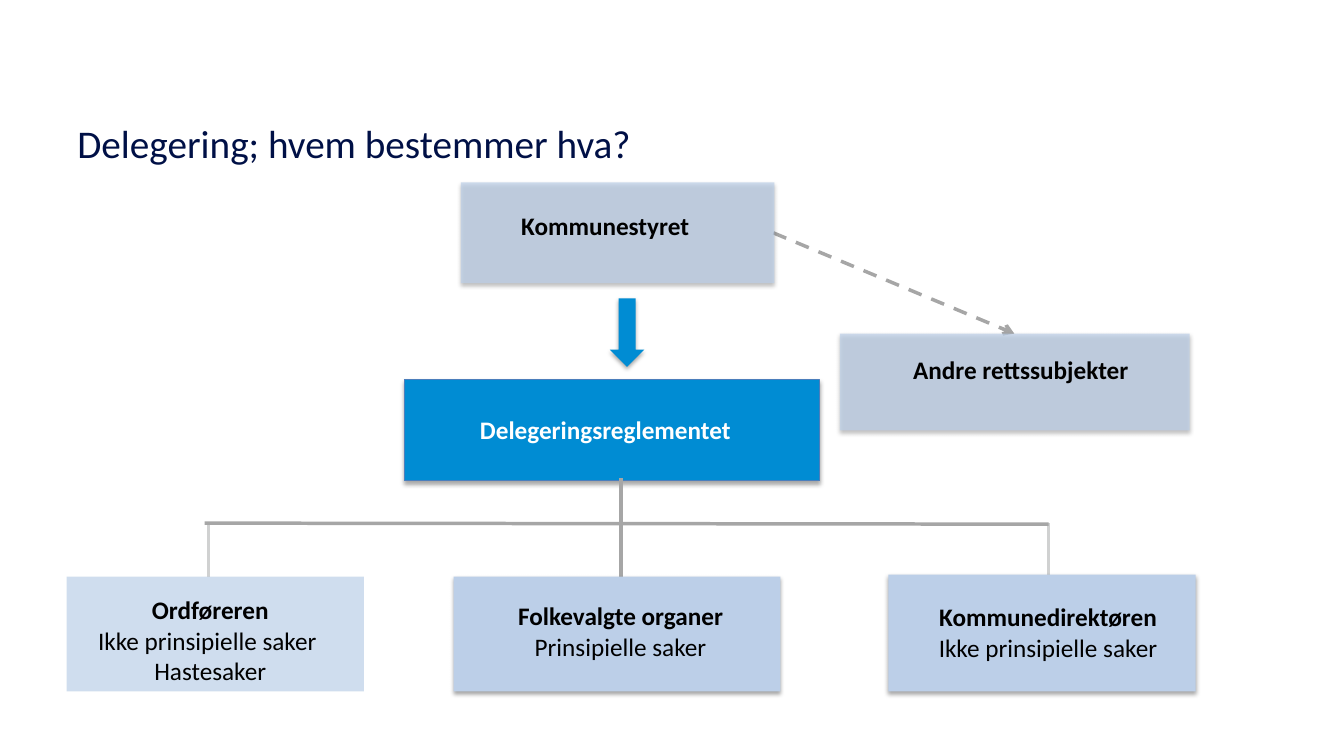
import pptx
import pptx.util
import pptx.dml.color
import pptx.enum.dml
import pptx.enum.shapes
import pptx.enum.text
import pptx.oxml
import pptx.oxml.ns
from dataclasses import dataclass

PX = 9144
SHAPE = pptx.enum.shapes.MSO_SHAPE
ALIGN = pptx.enum.text.PP_ALIGN
NS = pptx.oxml.ns.nsdecls("a")
SHADOW = (
    f'<a:effectLst {NS}><a:outerShdw blurRad="40000" dist="23000" dir="5400000" '
    'rotWithShape="0"><a:srgbClr val="000000"><a:alpha val="35000"/></a:srgbClr>'
    '</a:outerShdw></a:effectLst>'
)


@dataclass(frozen=True)
class Theme:
    font: str = "Calibri"
    head: int = 28
    body: int = 18
    rule: float = 2.5
    edge: float = 0.75
    navy: str = "001046"
    blue: str = "008CD3"
    rim: str = "4B7EBC"
    pale: str = "BCCFE8"
    gray: str = "A6A6A6"
    light: str = "D0D1D1"
    black: str = "000000"
    white: str = "FFFFFF"


THEME = Theme()


def rgb(code):
    return pptx.dml.color.RGBColor.from_string(code)


def emu(*nums):
    return [pptx.util.Emu(num * PX) for num in nums]


def block(slide, kind, box, fill, alpha=100, shadow=True, rim=None):
    shape = slide.shapes.add_shape(kind, *emu(*box))
    shape.shadow.inherit = False
    shape.fill.solid()
    shape.fill.fore_color.rgb = rgb(fill)
    if alpha < 100:
        tint = shape.fill._xPr.find(".//" + pptx.oxml.ns.qn("a:srgbClr"))
        tint.append(pptx.oxml.parse_xml(f'<a:alpha {NS} val="{alpha * 1000}"/>'))
    if rim:
        shape.line.color.rgb = rgb(rim)
        shape.line.width = pptx.util.Pt(THEME.edge)
    else:
        shape.line.fill.background()
    if shadow:
        props = shape._element.spPr
        old = props.find(pptx.oxml.ns.qn("a:effectLst"))
        props.replace(old, pptx.oxml.parse_xml(SHADOW))


def label(slide, box, lines, size, color, bold=True, align=ALIGN.CENTER, middle=False):
    frame = slide.shapes.add_textbox(*emu(*box)).text_frame
    frame.word_wrap = True
    if middle:
        frame.vertical_anchor = pptx.enum.text.MSO_ANCHOR.MIDDLE
    for rank, line in enumerate(lines):
        para = frame.paragraphs[0] if rank == 0 else frame.add_paragraph()
        para.text = line
        para.alignment = align
        para.font.name = THEME.font
        para.font.size = pptx.util.Pt(size)
        para.font.bold = bold and rank == 0
        para.font.color.rgb = rgb(color)


def rule(slide, start, end, color, arrow=False):
    line = slide.shapes.add_connector(
        pptx.enum.shapes.MSO_CONNECTOR.STRAIGHT, *emu(*start, *end))
    line.line.color.rgb = rgb(color)
    line.line.width = pptx.util.Pt(THEME.rule)
    if arrow:
        line.line.dash_style = pptx.enum.dml.MSO_LINE.DASH
        line.line._get_or_add_ln().append(
            pptx.oxml.parse_xml(f'<a:tailEnd {NS} type="arrow"/>'))
    line._element.spPr.append(pptx.oxml.parse_xml(f"<a:effectLst {NS}/>"))


def node(slide, box, inner, lines, fill=THEME.pale, color=THEME.black,
         align=ALIGN.CENTER, **look):
    left, top = box[:2]
    dx, dy, wide, high = inner
    block(slide, SHAPE.RECTANGLE, box, fill, **look)
    label(slide, (left + dx, top + dy, wide, high), lines,
          THEME.body, color, align=align)


def title(slide, box):
    label(slide, box, ["Delegering; hvem bestemmer hva?"], THEME.head,
          THEME.navy, bold=False, align=ALIGN.LEFT, middle=True)


def upper(slide, box):
    left, top = box[:2]
    rule(slide, (left + 366, top + 50), (left + 605, top + 150), THEME.gray, arrow=True)
    node(slide, (left + 56, top, 311, 100), (50, 23, 251, 40),
         ["Kommunestyret"], align=ALIGN.LEFT, alpha=70)
    block(slide, SHAPE.DOWN_ARROW, (left + 204, top + 115, 34, 68), THEME.blue)
    node(slide, (left, top + 196, 412, 100), (16, 29, 367, 40),
         ["Delegeringsreglementet"], THEME.blue, THEME.white, rim=THEME.rim)
    node(slide, (left + 432, top + 150, 347, 96), (36, 16, 287, 40),
         ["Andre rettssubjekter"], alpha=70)


def lower(slide, box):
    left, top, wide, high = box
    bar, roof, base = top + 45, top + 98, top + high
    rule(slide, (left + 550, roof), (left + 550, top), THEME.gray)
    for x in (left + 141, left + 974):
        rule(slide, (x, roof), (x, bar), THEME.light)
    rule(slide, (left + 137, bar), (left + 974, bar + 1), THEME.gray)
    node(slide, (left, roof, 295, base - roof), (8, 13, 269, 101),
         ["Ordføreren", "Ikke prinsipielle saker ", "Hastesaker"],
         alpha=70, shadow=False)
    node(slide, (left + 384, roof, 324, base - roof), (15, 19, 301, 71),
         ["Folkevalgte organer", "Prinsipielle saker"])
    node(slide, (left + wide - 305, roof - 2, 305, base - roof + 2), (29, 22, 259, 71),
         ["Kommunedirektøren", "Ikke prinsipielle saker"])


def main():
    deck = pptx.Presentation()
    deck.slide_width, deck.slide_height = emu(1333, 750)
    slide = deck.slides.add_slide(deck.slide_layouts[6])
    title(slide, (67, 80, 1200, 124))
    upper(slide, (401, 181, 779, 296))
    lower(slide, (66, 474, 1120, 212))
    deck.save("out.pptx")


if __name__ == "__main__":
    main()
